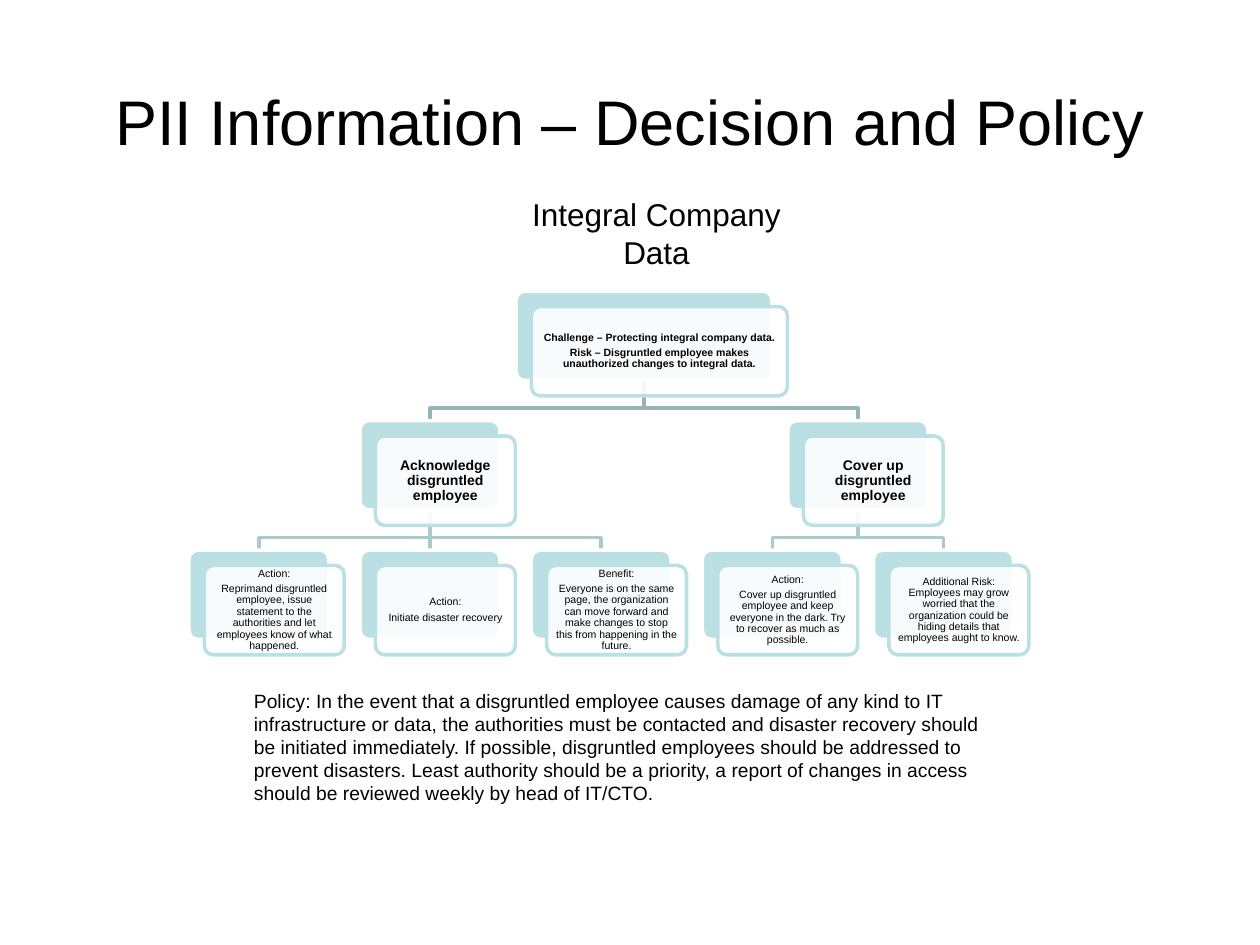
"""Build the decision tree and policy slide for integral company data."""
from lxml.etree import SubElement
from pptx import Presentation
from pptx.dml.color import RGBColor
from pptx.enum.shapes import MSO_CONNECTOR, MSO_SHAPE
from pptx.enum.text import MSO_ANCHOR, MSO_AUTO_SIZE, PP_ALIGN
from pptx.oxml.ns import qn
from pptx.util import Cm, Pt

TITLE = "PII Information – Decision and Policy"
SUBTITLE = "Integral Company Data"
POLICY = (
    "Policy: In the event that a disgruntled employee causes damage of any kind to IT "
    "infrastructure or data, the authorities must be contacted and disaster recovery should "
    "be initiated immediately. If possible, disgruntled employees should be addressed to "
    "prevent disasters. Least authority should be a priority, a report of changes in access "
    "should be reviewed weekly by head of IT/CTO."
)
TREE = (
    ["Challenge – Protecting integral company data.",
     "Risk – Disgruntled employee makes unauthorized changes to integral data."],
    [
        (["Acknowledge disgruntled employee"], [
            (["Action:", "Reprimand disgruntled employee, issue statement to the "
              "authorities and let employees know of what happened."], []),
            (["Action:", "Initiate disaster recovery"], []),
            (["Benefit:", "Everyone is on the same page, the organization can move forward "
              "and make changes to stop this from happening in the future."], []),
        ]),
        (["Cover up disgruntled employee"], [
            (["Action:", "Cover up disgruntled employee and keep everyone in the dark. "
              "Try to recover as much as possible."], []),
            (["Additional Risk: Employees may grow worried that the organization could be "
              "hiding details that employees aught to know."], []),
        ]),
    ],
)

FONT = "Arial"
BLACK = RGBColor(0x00, 0x00, 0x00)
WHITE = RGBColor(0xFF, 0xFF, 0xFF)
AQUA = RGBColor(0xBB, 0xE0, 0xE3)
LINK_COLORS = [RGBColor(0x96, 0xB3, 0xB6), RGBColor(0xAA, 0xCB, 0xCE)]

LEVEL_WIDTHS = [Cm(5.16), Cm(2.82), Cm(2.82)]
LEVEL_STYLES = [(6, True), (8, True), (6, False)]
TREE_TOP, LEVEL_STEP = Cm(5.87), Cm(2.61)
FIRST_LEAF_CENTER, LEAF_STEP = Cm(5.22), Cm(3.45)
CARD_HEIGHT, CARD_OFFSET, CARD_INSET = Cm(1.8), Cm(0.31), Cm(0.13)
LINK_DROP = Cm(0.56)


def fill_text(text_frame, lines, size, bold=False, align=PP_ALIGN.LEFT):
    text_frame.word_wrap = True
    text_frame.text = "\n".join(lines)
    for paragraph in text_frame.paragraphs:
        paragraph.alignment = align
        for run in paragraph.runs:
            run.font.name, run.font.size = FONT, Pt(size)
            run.font.bold, run.font.color.rgb = bold, BLACK


def add_text_box(slide, box, text, size, align):
    shape = slide.shapes.add_textbox(*box)
    fill_text(shape.text_frame, [text], size, align=align)


def add_card(slide, left, top, width, fill, line):
    shape = slide.shapes.add_shape(MSO_SHAPE.ROUNDED_RECTANGLE, left, top, width, CARD_HEIGHT)
    shape.adjustments[0] = 0.1
    shape.shadow.inherit = False
    shape.fill.solid()
    shape.fill.fore_color.rgb = fill
    shape.line.color.rgb, shape.line.width = line, Pt(2)
    return shape


def add_node(slide, center, level, lines):
    width = LEVEL_WIDTHS[level]
    left, top = center - width // 2, TREE_TOP + level * LEVEL_STEP
    back = add_card(slide, left, top, width, AQUA, WHITE)
    front = add_card(slide, left + CARD_OFFSET, top + CARD_OFFSET, width, WHITE, AQUA)
    color = front.element.spPr.find(qn("a:solidFill")).find(qn("a:srgbClr"))
    SubElement(color, qn("a:alpha"), val="90000")
    text_frame = front.text_frame
    text_frame.vertical_anchor = MSO_ANCHOR.MIDDLE
    text_frame.margin_left = text_frame.margin_right = CARD_INSET
    text_frame.margin_top = text_frame.margin_bottom = CARD_INSET
    size, bold = LEVEL_STYLES[level]
    fill_text(text_frame, lines, size, bold, PP_ALIGN.CENTER)
    for paragraph in text_frame.paragraphs:
        paragraph.line_spacing = 0.9
        paragraph.space_after = Pt(0.35 * size)
    return back


def add_link(slide, parent, parent_center, child, child_center, color):
    start, end = parent.top + CARD_HEIGHT, child.top
    if parent_center == child_center:
        link = slide.shapes.add_connector(
            MSO_CONNECTOR.STRAIGHT, parent_center, start, child_center, end)
        link.begin_connect(parent, 2)
        link.end_connect(child, 0)
        SubElement(link.element.spPr, qn("a:effectLst"))
    else:
        bend = start + LINK_DROP
        builder = slide.shapes.build_freeform(parent_center, start)
        builder.add_line_segments(
            [(parent_center, bend), (child_center, bend), (child_center, end)], close=False)
        link = builder.convert_to_shape()
        link.shadow.inherit = False
        link.fill.background()
    link.line.color.rgb, link.line.width = color, Pt(2)
    slide.shapes.title.element.addnext(link.element)


def count_leaves(node):
    return sum(map(count_leaves, node[1])) or 1


def find_center(node, first_leaf):
    children = node[1]
    if not children:
        return FIRST_LEAF_CENTER + first_leaf * LEAF_STEP
    last_start = first_leaf + count_leaves(node) - count_leaves(children[-1])
    return (find_center(children[0], first_leaf) + find_center(children[-1], last_start)) // 2


def add_tree(slide, node, level=0, first_leaf=0):
    lines, children = node
    center = find_center(node, first_leaf)
    card = add_node(slide, center, level, lines)
    for child in children:
        child_card, child_center = add_tree(slide, child, level + 1, first_leaf)
        add_link(slide, card, center, child_card, child_center, LINK_COLORS[level])
        first_leaf += count_leaves(child)
    return card, center


def main():
    presentation = Presentation()
    presentation.slide_width, presentation.slide_height = Cm(25.4), Cm(19.05)
    slide = presentation.slides.add_slide(presentation.slide_layouts[5])
    title = slide.shapes.title
    title.left, title.top, title.width, title.height = Cm(1.27), Cm(0.84), Cm(22.86), Cm(3.18)
    title.text_frame.auto_size = MSO_AUTO_SIZE.NONE
    title.text_frame.vertical_anchor = MSO_ANCHOR.MIDDLE
    fill_text(title.text_frame, [TITLE], 36, align=PP_ALIGN.CENTER)
    add_tree(slide, TREE)
    add_text_box(slide, (Cm(4.87), Cm(13.77), Cm(15.44), Cm(2.62)), POLICY, 11, PP_ALIGN.LEFT)
    add_text_box(slide, (Cm(10.16), Cm(3.81), Cm(6.15), Cm(1.8)), SUBTITLE, 18, PP_ALIGN.CENTER)
    presentation.save("out.pptx")


if __name__ == "__main__":
    main()
